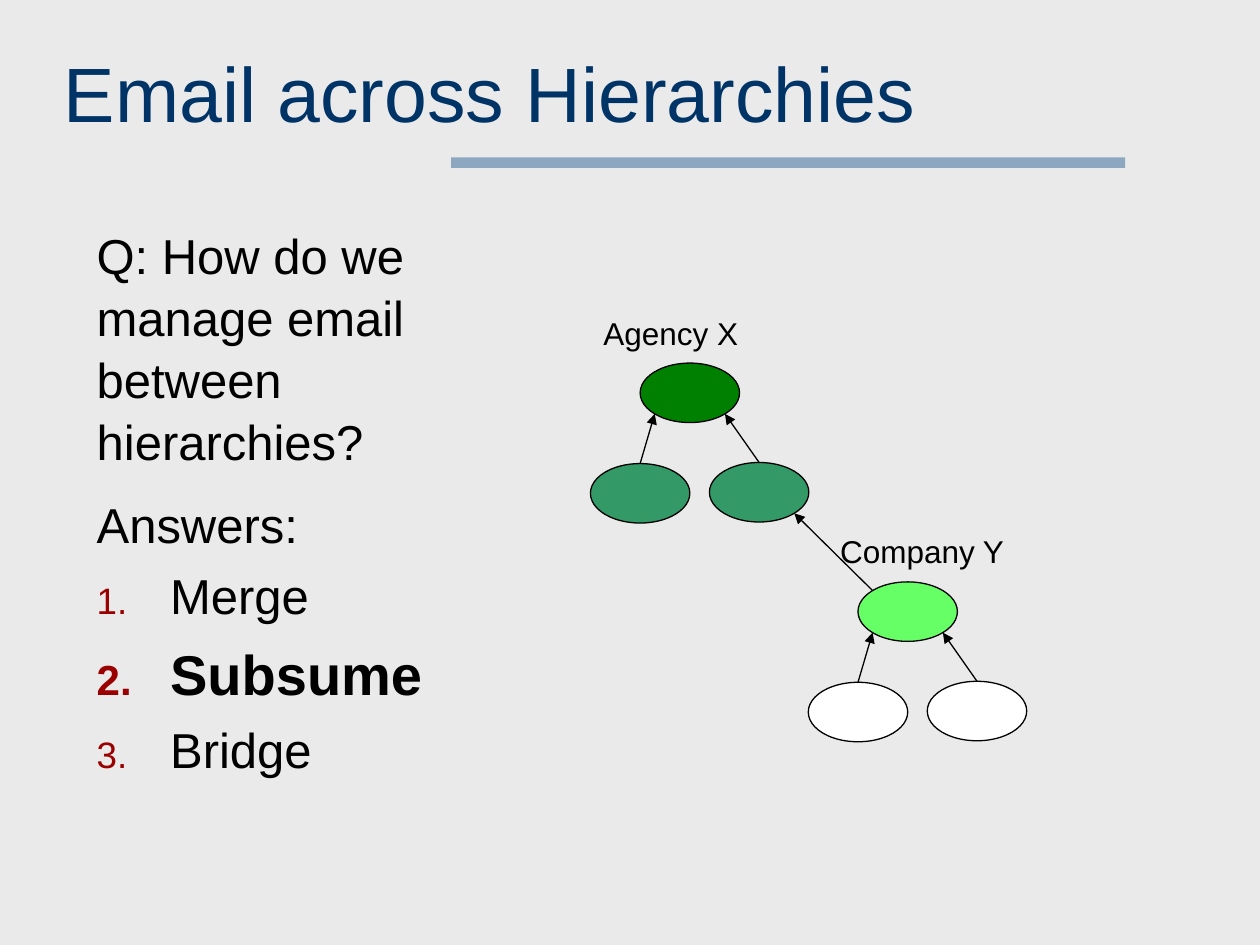
from math import sqrt

from lxml import etree
from pptx import Presentation
from pptx.dml.color import RGBColor
from pptx.enum.shapes import MSO_CONNECTOR, MSO_SHAPE
from pptx.oxml.ns import qn
from pptx.util import Pt

OVAL = MSO_SHAPE.OVAL
RECTANGLE = MSO_SHAPE.RECTANGLE
STRAIGHT = MSO_CONNECTOR.STRAIGHT
color = RGBColor.from_string

presentation = Presentation()
presentation.slide_width, presentation.slide_height = Pt(720), Pt(540)
slide = presentation.slides.add_slide(presentation.slide_layouts[6])
slide.background.fill.solid()
slide.background.fill.fore_color.rgb = color("EAEAEA")


def add_text(box, lines, margins=(7.2, 5), hue="000000"):
    """Each line is (text, size, bold, space before); returns the paragraphs."""
    frame = slide.shapes.add_textbox(*map(Pt, box)).text_frame
    frame.word_wrap = True
    frame.margin_left, frame.margin_top = map(Pt, margins)
    paragraphs = []
    for index, (text, size, bold, space) in enumerate(lines):
        paragraph = frame.add_paragraph() if index else frame.paragraphs[0]
        paragraph.line_spacing = 1.05
        paragraph.space_before = Pt(space)
        run = paragraph.add_run()
        run.text = text
        formats = {"name": "Arial", "size": Pt(size), "bold": bold}
        for name, value in formats.items():
            setattr(run.font, name, value)
        run.font.color.rgb = color(hue)
        paragraphs.append(paragraph)
    return paragraphs


def add_arrow(start, end, child=None):
    arrow = slide.shapes.add_connector(STRAIGHT, *map(Pt, start + end))
    if child is not None:
        arrow.begin_connect(child, 0)
    arrow.line.width = Pt(0.75)
    arrow.line.color.rgb = color("000000")
    etree.SubElement(arrow.line._get_or_add_ln(), qn("a:tailEnd"), type="triangle")
    etree.SubElement(arrow._element.spPr, qn("a:effectLst"))


# Half-transparent rule under the title
rule = slide.shapes.add_shape(RECTANGLE, Pt(257.8), Pt(90), Pt(385.2), Pt(6))
rule.shadow.inherit = False
rule.fill.solid()
rule.fill.fore_color.rgb = color("336699")
rule_color = rule.fill._xPr.find(qn("a:solidFill"))[0]
etree.SubElement(rule_color, qn("a:alpha"), val="50000")
rule.line.fill.background()

# Title and question
add_text((31, 18, 649.4, 85.7), [("Email across Hierarchies", 44, False, 0)],
         margins=(5.5, 5.5), hue="003366")
add_text((48.2, 122.4, 277.9, 147.6),
         [("Q: How do we manage email between hierarchies?", 28, False, 0)])

# Answers, numbered after the heading
answers = add_text((48.2, 275.8, 204.5, 203.8), [
    ("Answers:", 28, False, 0),
    ("Merge", 28, False, 5.6),
    ("Subsume", 32, True, 6.4),
    ("Bridge", 28, False, 5.6),
])
for paragraph in answers:
    properties = paragraph._p.get_or_add_pPr()
    properties.set("marL", str(Pt(42)))
    properties.set("indent", str(-Pt(42)))
    if paragraph is not answers[0]:
        bullet_color = etree.SubElement(properties, qn("a:buClr"))
        etree.SubElement(bullet_color, qn("a:srgbClr"), val="9A0000")
        etree.SubElement(properties, qn("a:buSzPct"), val="75000")
        etree.SubElement(properties, qn("a:buAutoNum"), type="arabicPeriod")

# Two hierarchies: a root with two children reporting to it
NODE_WIDTH, NODE_HEIGHT = 56.8, 34
DIAGONAL_X = NODE_WIDTH / 2 / sqrt(2)
DIAGONAL_Y = NODE_HEIGHT / 2 / sqrt(2)
CHILDREN = [(-28.4, 57.4, -1), (39.6, 56.8, 1)]  # offset from root, side
hierarchies = [
    ("Agency X", (337.7, 173.5, 118.8, 28.8), (394.2, 224.5), "008000", "339966"),
    ("Company Y", (473, 298.1, 113, 28.8), (518.7, 349.5), "66FF66", "FFFFFF"),
]
for label, label_box, (root_x, root_y), root_color, child_color in hierarchies:
    add_text(label_box, [(label, 18, False, 0)])
    nodes = []
    for dx, dy, hue in [(0, 0, root_color)] + [
            (dx, dy, child_color) for dx, dy, side in CHILDREN]:
        node = slide.shapes.add_shape(
            OVAL, Pt(root_x + dx - NODE_WIDTH / 2), Pt(root_y + dy - NODE_HEIGHT / 2),
            Pt(NODE_WIDTH), Pt(NODE_HEIGHT))
        node.shadow.inherit = False
        node.fill.solid()
        node.fill.fore_color.rgb = color(hue)
        node.line.color.rgb = color("000000")
        node.line.width = Pt(0.75)
        nodes.append(node)
    for child, (dx, dy, side) in zip(nodes[1:], CHILDREN):
        add_arrow((root_x + dx, root_y + dy - NODE_HEIGHT / 2),
                  (root_x + side * DIAGONAL_X, root_y + DIAGONAL_Y), child)

# The company's root reports to the agency's right-hand child
agency_x, agency_y = hierarchies[0][2]
company_x, company_y = hierarchies[1][2]
right_dx, right_dy, _ = CHILDREN[1]
add_arrow((company_x - DIAGONAL_X, company_y - DIAGONAL_Y),
          (agency_x + right_dx + DIAGONAL_X, agency_y + right_dy + DIAGONAL_Y))

presentation.save("out.pptx")
